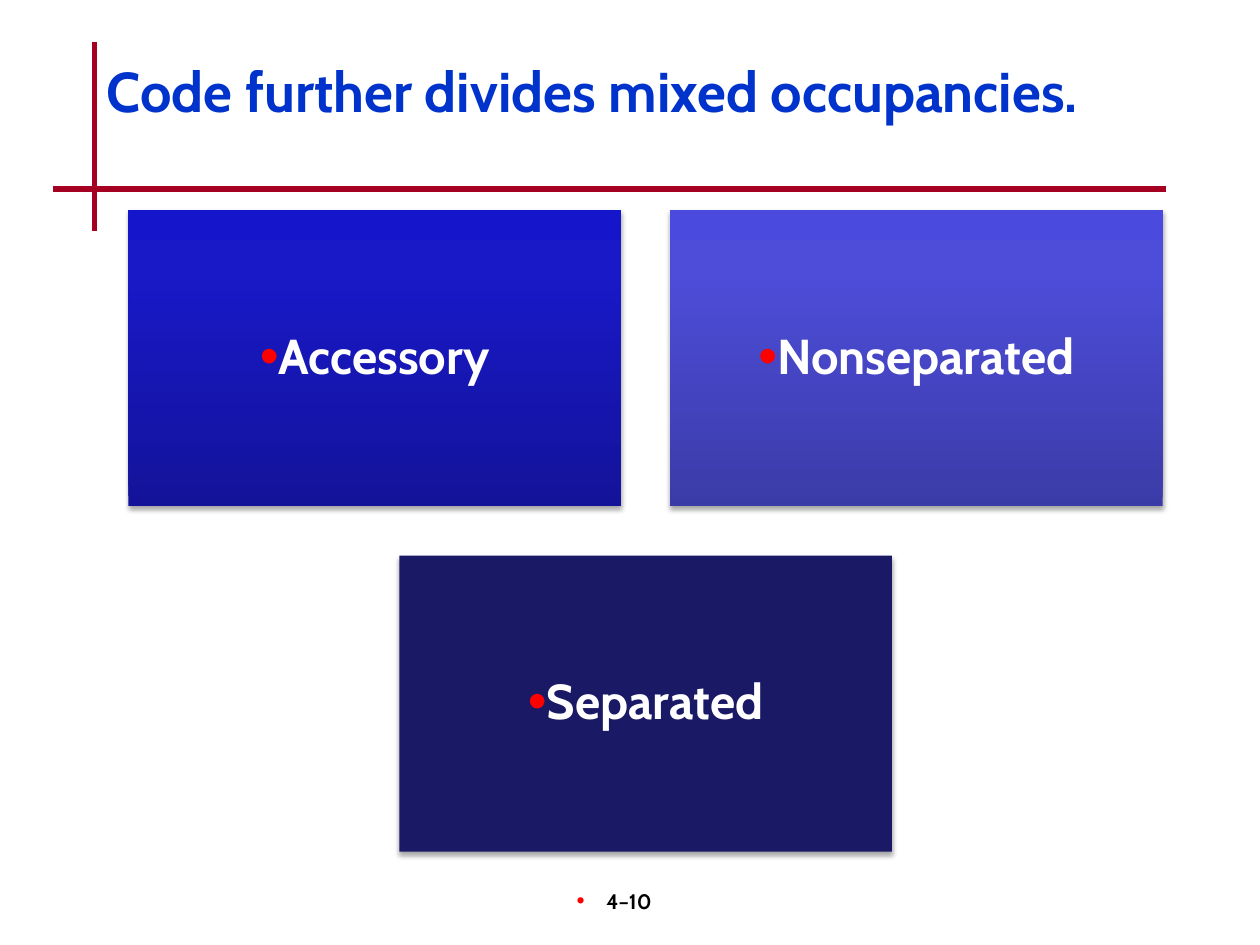
from dataclasses import dataclass

from lxml.etree import SubElement
from pptx import Presentation
from pptx.dml.color import RGBColor
from pptx.enum.shapes import MSO_CONNECTOR, MSO_SHAPE
from pptx.enum.text import MSO_ANCHOR, PP_ALIGN
from pptx.oxml.ns import qn
from pptx.util import Cm, Pt

RULE_RED = "A50021"
BULLET_RED = "FF0000"
CARD_W, CARD_H, GAP = 9.93, 5.97, 0.99
CARDS_LEFT, CARDS_TOP = 2.59, 4.24


@dataclass
class Card:
    label: str
    stops: tuple[str, ...]


@dataclass
class Rule:
    x1: float
    y1: float
    x2: float
    y2: float


ROWS = [
    [
        Card("Accessory", ("13139A", "1919C8", "1515CC")),
        Card("Nonseparated", ("3B3BA8", "4D4DDA", "4A4ADE")),
    ],
    [Card("Separated", ("191966",))],
]
RULES = [Rule(1.9, 0.84, 1.9, 4.65), Rule(1.07, 3.81, 23.5, 3.81)]


def rgb(value: str) -> RGBColor:
    return RGBColor.from_string(value)


def child(parent, tag: str, **attrs):
    return SubElement(parent, qn(tag), {k: str(v) for k, v in attrs.items()})


def apply(target, formats: dict) -> None:
    for name, value in formats.items():
        setattr(target, name, value)


def write(s, text: str, size: int, color: str, frame: dict, para: dict):
    tf = s.text_frame
    apply(tf, {"word_wrap": True, **frame})
    p = tf.paragraphs[0]
    apply(p, para)
    r = p.add_run()
    r.text = text
    apply(r.font, {"name": "Cabin", "size": Pt(size), "bold": True})
    r.font.color.rgb = rgb(color)
    return p


def add_bullet(p, percent: int, margin: float = 0, hanging: float = 0) -> None:
    pPr = p._p.get_or_add_pPr()
    pPr.set("marL", str(Cm(margin)))
    pPr.set("indent", str(-Cm(hanging)))
    child(child(pPr, "a:buClr"), "a:srgbClr", val=BULLET_RED)
    child(pPr, "a:buSzPct", val=percent * 1000)
    child(pPr, "a:buFont", typeface="Arial")
    child(pPr, "a:buChar", char="•")


def add_rule(sp, rule: Rule) -> None:
    s = sp.add_connector(MSO_CONNECTOR.STRAIGHT, Cm(rule.x1), Cm(rule.y1),
                         Cm(rule.x2), Cm(rule.y2))
    s.line.color.rgb = rgb(RULE_RED)
    s.line.width = Pt(3)
    child(s._element.spPr, "a:effectLst")


def fill_card(s, stops: tuple[str, ...]) -> None:
    if len(stops) == 1:
        s.fill.solid()
        s.fill.fore_color.rgb = rgb(stops[0])
        return
    s.fill.gradient()
    grad = s._element.spPr.find(qn("a:gradFill"))
    for old in list(grad):
        grad.remove(old)
    gs_list = child(grad, "a:gsLst")
    for position, color in zip((0, 80, 100), stops):
        gs = child(gs_list, "a:gs", pos=position * 1000)
        child(gs, "a:srgbClr", val=color)
    child(grad, "a:lin", ang=270 * 60000, scaled=0)


def add_shadow(s) -> None:
    s.shadow.inherit = False
    effects = s._element.spPr.find(qn("a:effectLst"))
    shadow = child(effects, "a:outerShdw", blurRad=Pt(3.1), dist=Pt(1.8),
                   dir=90 * 60000, rotWithShape=0)
    child(child(shadow, "a:srgbClr", val="000000"), "a:alpha", val=35000)


def add_card(sp, card: Card, left: float, top: float) -> None:
    s = sp.add_shape(MSO_SHAPE.RECTANGLE, Cm(left), Cm(top),
                     Cm(CARD_W), Cm(CARD_H))
    fill_card(s, card.stops)
    s.line.fill.background()
    add_shadow(s)
    sides = ("left", "top", "right", "bottom")
    frame = {f"margin_{side}": Cm(0.3) for side in sides}
    p = write(s, card.label, 28, "FFFFFF",
              {**frame, "vertical_anchor": MSO_ANCHOR.MIDDLE},
              {"alignment": PP_ALIGN.CENTER, "line_spacing": 0.9,
               "space_after": Pt(9.8)})
    add_bullet(p, 110)


def main() -> None:
    prs = Presentation()
    apply(prs, {"slide_width": Cm(25.4), "slide_height": Cm(19.05)})
    sp = prs.slides.add_slide(prs.slide_layouts[6]).shapes

    for rule in RULES:
        add_rule(sp, rule)

    number = sp.add_textbox(Cm(9.96), Cm(17.78), Cm(5.28), Cm(1.27))
    p = write(number, "4–10", 12, "000000", {},
              {"alignment": PP_ALIGN.CENTER})
    add_bullet(p, 110, margin=0.15, hanging=0.6)

    title = sp.add_textbox(Cm(1.9), Cm(1.27), Cm(21.59), Cm(2.54))
    write(title, "Code further divides mixed occupancies.", 32, "0033CC", {},
          {"line_spacing": 0.8})

    widest = max(len(row) for row in ROWS)
    for i, row in enumerate(ROWS):
        inset = (widest - len(row)) * (CARD_W + GAP) / 2
        for j, card in enumerate(row):
            add_card(sp, card, CARDS_LEFT + inset + j * (CARD_W + GAP),
                     CARDS_TOP + i * (CARD_H + GAP))

    prs.save("out.pptx")


if __name__ == "__main__":
    main()
